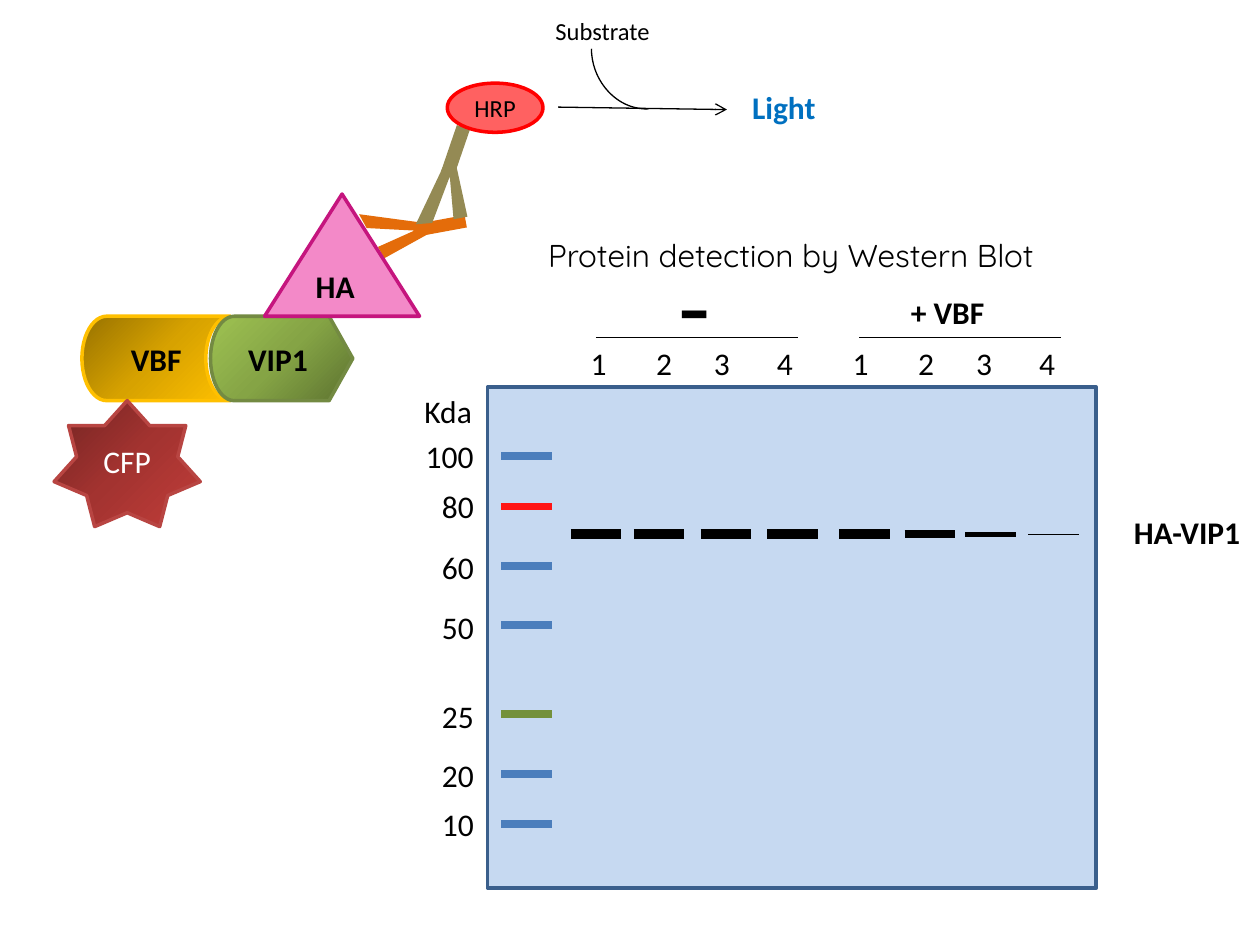
from copy import deepcopy
from pptx import Presentation
from pptx.dml.color import RGBColor
from pptx.enum.shapes import MSO_CONNECTOR, MSO_SHAPE
from pptx.enum.text import MSO_ANCHOR, PP_ALIGN
from pptx.oxml.ns import qn
from pptx.util import Inches, Pt
from lxml import etree

STRAIGHT = MSO_CONNECTOR.STRAIGHT
RECTANGLE, ARC, OVAL = MSO_SHAPE.RECTANGLE, MSO_SHAPE.ARC, MSO_SHAPE.OVAL
CYLINDER, DISPLAY = MSO_SHAPE.FLOWCHART_STORED_DATA, MSO_SHAPE.FLOWCHART_DISPLAY
STAR, TRIANGLE = MSO_SHAPE.STAR_7_POINT, MSO_SHAPE.FLOWCHART_EXTRACT
MIDDLE, TOP = MSO_ANCHOR.MIDDLE, MSO_ANCHOR.TOP
LEFT, CENTER = PP_ALIGN.LEFT, PP_ALIGN.CENTER
BLACK, BLUE = "000000", "4B7EBC"
color = RGBColor.from_string

deck = Presentation()
deck.slide_width, deck.slide_height = Inches(10), Inches(7.5)
page = deck.slides.add_slide(deck.slide_layouts[5])


def write(box, text, size=18, font="Calibri", ink=BLACK, bold=False,
          align=LEFT, anchor=TOP, wrap=False):
    frame = box.text_frame
    frame.word_wrap = wrap
    frame.vertical_anchor = anchor
    para = frame.paragraphs[0]
    para.alignment = align
    span = para.add_run()
    span.text = text
    span.font.size = Pt(size)
    span.font.name = font
    span.font.bold = bold
    span.font.color.rgb = color(ink)
    return para


def draw_line(x1, y1, x2, y2, ink, width):
    line = page.shapes.add_connector(STRAIGHT, Inches(x1), Inches(y1), Inches(x2), Inches(y2))
    line.line.color.rgb = color(ink)
    line.line.width = Pt(width)
    etree.SubElement(line._element.spPr, qn("a:effectLst"))
    return line


title = page.shapes.title
title.left, title.top, title.width, title.height = (
    Inches(4.25), Inches(1.82), Inches(4.3), Inches(0.4))
write(title, "Protein detection by Western Blot", font="Quicksand")

gel = page.shapes.add_shape(RECTANGLE, Inches(3.87), Inches(3.07), Inches(4.83), Inches(3.98))
gel.shadow.inherit = False
gel.fill.solid()
gel.fill.fore_color.rgb = color("C6D9F1")
gel.line.color.rgb = color("3A5F8C")
gel.line.width = Pt(2)

ladder = [
    ("100", 3.62, 3.42, BLUE), ("80", 4.02, 3.82, "FF1515"), ("60", 4.49, 4.3, BLUE),
    ("50", 4.96, 4.78, BLUE), ("25", 5.67, 5.48, "74913B"),
    ("20", 6.14, 5.95, BLUE), ("10", 6.54, 6.34, BLUE),
]
for weight, y, label_top, ink in ladder:
    draw_line(3.98, y, 4.38, y, ink, 4.5)
    width = 0.59 if len(weight) == 3 else 0.46
    label = page.shapes.add_textbox(
        Inches(3.87 - width), Inches(label_top), Inches(width), Inches(0.4))
    write(label, weight)

bands = [(4.53, 6), (5.03, 6), (5.56, 6), (6.09, 6),
         (6.66, 6), (7.18, 4.5), (7.66, 3), (8.16, 0.25)]
for x, width in bands:
    draw_line(x, 4.24, x + 0.4, 4.24, BLACK, width)

for x in (4.73, 6.82):
    draw_line(x, 2.68, x + 1.6, 2.68, BLACK, 0.75)

lanes = page.shapes.add_textbox(Inches(4.48), Inches(2.68), Inches(4.12), Inches(0.4))
lanes.text_frame.margin_left = 0
para = write(lanes, "\t1\t2\t3\t4\t1\t2\t3\t4", wrap=True)
tabs = etree.SubElement(para._p.get_or_add_pPr(), qn("a:tabLst"))
for group_start in (4.75, 6.83):
    for step in (0, 0.52, 0.98, 1.48):
        position = Inches(group_start + step - 4.48)
        etree.SubElement(tabs, qn("a:tab"), pos=str(position), algn="ctr")

antibodies = [
    ("E46C0A", [(3.52, 1.79), (3.05, 2.05), (3, 1.96), (3.29, 1.83),
                (2.91, 1.81), (2.85, 1.7)], (3.33, 1.74, 0.37, 0.1), 349.6),
    ("948A54", [(3.59, 1.17), (3.71, 1.72), (3.6, 1.74), (3.57, 1.4),
                (3.43, 1.77), (3.3, 1.78)], (3.42, 1.14, 0.39, 0.11), 288.9),
]
for fill, points, stem_place, angle in antibodies:
    corners = [(Inches(x), Inches(y)) for x, y in points]
    builder = page.shapes.build_freeform(*corners[0])
    builder.add_line_segments(corners[1:], close=True)
    arms = builder.convert_to_shape()
    stem = page.shapes.add_shape(RECTANGLE, *[Inches(length) for length in stem_place])
    stem.rotation = angle
    for part in (arms, stem):
        part.shadow.inherit = False
        part.fill.solid()
        part.fill.fore_color.rgb = color(fill)
        part.line.fill.background()

proteins = [
    (CYLINDER, (0.65, 2.51, 1.18, 0.67), 0, ["977200", "D7A200", "FFC000"], "FFC000",
     "VBF", dict(bold=True, align=CENTER)),
    (DISPLAY, (1.67, 2.51, 1.13, 0.67), 180, ["5D7330", "85A445", "9EC252"], "738A42",
     "", {}),
    (STAR, (0.43, 3.18, 1.16, 1), 0, ["722422", "A33330", "C13D39"], "B84542",
     "CFP", dict(ink="FFFFFF", align=CENTER)),
    (TRIANGLE, (2.1, 1.54, 1.23, 0.97), 0, ["F389C8"], "C5157E", "HA", dict(bold=True)),
    (OVAL, (3.55, 0.66, 0.76, 0.39), 0, ["FF6161"], "FF0000",
     "HRP", dict(size=14, align=CENTER)),
]
for kind, place, angle, fills, outline, text, style in proteins:
    protein = page.shapes.add_shape(kind, *[Inches(length) for length in place])
    protein.shadow.inherit = False
    protein.rotation = angle
    protein.line.color.rgb = color(outline)
    protein.line.width = Pt(2)
    if len(fills) == 1:
        protein.fill.solid()
        protein.fill.fore_color.rgb = color(fills[0])
    else:
        protein.fill.gradient()
        protein.fill.gradient_angle = 315
        stops = protein._element.spPr.find(qn("a:gradFill")).find(qn("a:gsLst"))
        stops.insert(1, deepcopy(stops[0]))
        for stop, ink, position in zip(protein.fill.gradient_stops, fills, (0, 0.5, 1)):
            stop.color.rgb = color(ink)
            stop.position = position
    if text:
        write(protein, text, anchor=MIDDLE, wrap=True, **style)

curve = page.shapes.add_shape(ARC, Inches(4.7), Inches(-0.03), Inches(0.79), Inches(0.9))
curve.shadow.inherit = False
curve.rotation = 160.4
curve.adjustments[0], curve.adjustments[1] = 169.78, 14.6
curve.fill.background()
curve.line.color.rgb = color(BLACK)
curve.line.width = Pt(0.75)

reaction = draw_line(4.43, 0.85, 5.77, 0.87, BLACK, 0.75)
etree.SubElement(reaction.line._get_or_add_ln(), qn("a:tailEnd"), type="arrow")

labels = [
    ("VIP1", (1.87, 2.65, 0.68, 0.4), dict(bold=True)),
    ("HA-VIP1", (8.9, 4.02, 1.07, 0.4), dict(bold=True)),
    ("-", (5.29, 1.85, 0.46, 1.11), dict(size=60)),
    ("+ VBF", (7.13, 2.28, 0.79, 0.4), dict(bold=True)),
    ("Kda", (3.27, 3.06, 0.58, 0.4), {}),
    ("Substrate", (4.31, 0.08, 0.96, 0.34), dict(size=14)),
    ("Light", (5.87, 0.65, 0.71, 0.4), dict(bold=True, ink="0070C0")),
]
for text, place, style in labels:
    label = page.shapes.add_textbox(*[Inches(length) for length in place])
    write(label, text, **style)

deck.save("out.pptx")
